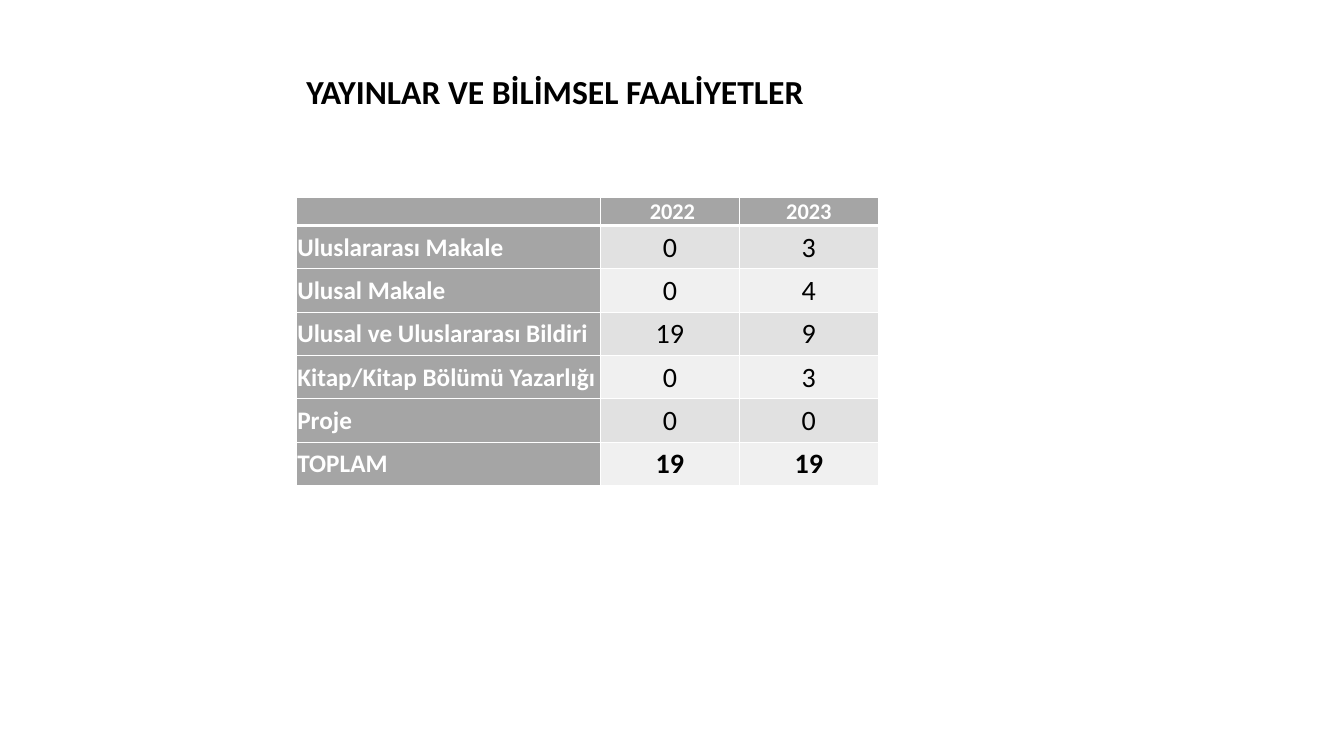
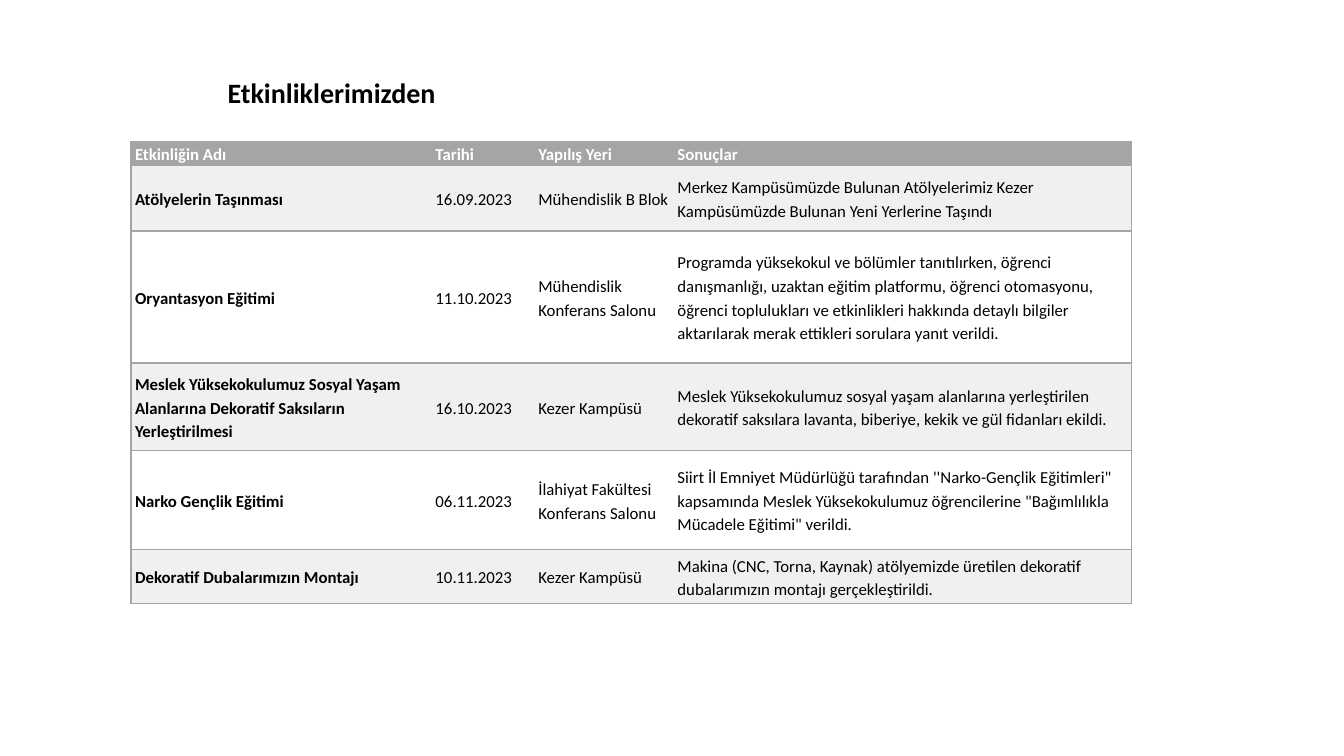
from dataclasses import dataclass

from lxml import etree
from pptx import Presentation
from pptx import util as u
from pptx.dml.color import RGBColor
from pptx.enum import text
from pptx.oxml import ns


# Shared look: colours, font, type sizes and line widths
@dataclass(frozen=True)
class Theme:
    font: str = "Calibri"
    ink: str = "000000"
    paper: str = "FFFFFF"
    grey: str = "A5A5A5"
    band_dark: str = "E1E1E1"
    band_light: str = "F0F0F0"
    main_title: int = 24
    sub_title: int = 20
    year: int = 16
    label: int = 18
    count: int = 20
    event: int = 12
    thin: int = 1
    thick: int = 3


THEME = Theme()
SLIDE_W, SLIDE_H = u.Inches(13.33), u.Inches(7.5)
PLAIN_TABLE = "{2D5ABB26-0587-4C30-8999-92F81FD0307C}"
CENTER, LEFT = text.PP_ALIGN.CENTER, text.PP_ALIGN.LEFT
MIDDLE, TOP = text.MSO_ANCHOR.MIDDLE, text.MSO_ANCHOR.TOP

# Publication counts: kind, 2022, 2023
PUBLICATIONS = [
    ("", " 2022", "2023"),
    ("Uluslararası Makale", "0", "3"),
    ("Ulusal Makale", "0", "4"),
    ("Ulusal ve Uluslararası Bildiri", "19", "9"),
    ("Kitap/Kitap Bölümü Yazarlığı", "0", "3"),
    ("Proje", "0", "0"),
    ("TOPLAM", "19", "19"),
]

# Events: name, date, place, results
EVENTS = [
    ("Etkinliğin Adı", "Tarihi", "Yapılış Yeri", "Sonuçlar"),
    ("Atölyelerin Taşınması", "16.09.2023", "Mühendislik B Blok",
     "Merkez Kampüsümüzde Bulunan Atölyelerimiz Kezer Kampüsümüzde "
     "Bulunan Yeni Yerlerine Taşındı"),
    ("Oryantasyon Eğitimi", "11.10.2023", "Mühendislik Konferans Salonu",
     "Programda yüksekokul ve bölümler tanıtılırken, öğrenci danışmanlığı, "
     "uzaktan eğitim platformu, öğrenci otomasyonu, öğrenci toplulukları ve "
     "etkinlikleri hakkında detaylı bilgiler aktarılarak merak ettikleri "
     "sorulara yanıt verildi."),
    ("Meslek Yüksekokulumuz Sosyal Yaşam Alanlarına Dekoratif Saksıların "
     "Yerleştirilmesi", "16.10.2023", "Kezer Kampüsü",
     "Meslek Yüksekokulumuz sosyal yaşam alanlarına yerleştirilen dekoratif "
     "saksılara lavanta, biberiye, kekik ve gül fidanları ekildi."),
    ("Narko Gençlik Eğitimi", "06.11.2023",
     "İlahiyat Fakültesi Konferans Salonu",
     "Siirt İl Emniyet Müdürlüğü tarafından ''Narko-Gençlik Eğitimleri\" "
     "kapsamında Meslek Yüksekokulumuz öğrencilerine \"Bağımlılıkla Mücadele "
     "Eğitimi\" verildi."),
    ("Dekoratif Dubalarımızın Montajı", "10.11.2023", "Kezer Kampüsü",
     "Makina (CNC, Torna, Kaynak) atölyemizde üretilen dekoratif "
     "dubalarımızın montajı gerçekleştirildi."),
]


# Helpers
def area(left, top, width, height):
    """Turn percentages of the slide into lengths."""
    return [int(share * side / 100) for share, side in
            zip((left, top, width, height), (SLIDE_W, SLIDE_H) * 2)]


def apply(target, values):
    for name, value in values.items():
        setattr(target, name, value)


def write(paragraph, words, size, color, bold, **layout):
    apply(paragraph, layout)
    if not words:
        # An empty cell still needs its type size to keep the row low
        end = etree.SubElement(paragraph._p, ns.qn("a:endParaRPr"))
        end.set("sz", str(size * 100))
        return
    run = paragraph.add_run()
    run.text = words
    apply(run.font, {"name": THEME.font, "size": u.Pt(size), "bold": bold})
    run.font.color.rgb = RGBColor.from_string(color)


def add_title(slide, words, place, size, line_spacing):
    frame = slide.shapes.add_textbox(*area(*place)).text_frame
    apply(frame, {"word_wrap": True, "vertical_anchor": MIDDLE})
    write(frame.paragraphs[0], words, size, THEME.ink, True,
          line_spacing=line_spacing)


def set_borders(cell, color, widths):
    """Draw the sides named in widths (L, R, T, B); the others stay bare."""
    props = cell._tc.get_or_add_tcPr()
    for side in "LRTB":
        line = etree.SubElement(props, ns.qn(f"a:ln{side}"))
        if side in widths:
            line.set("w", str(u.Pt(widths[side])))
            fill = etree.SubElement(line, ns.qn("a:solidFill"))
            etree.SubElement(fill, ns.qn("a:srgbClr")).set("val", color)
        else:
            etree.SubElement(line, ns.qn("a:noFill"))


def add_grid(slide, rows, place, col_weights, row_weights, style):
    """Add a table; style(row, col) gives each cell's format."""
    left, top, width, height = area(*place)
    frame = slide.shapes.add_table(len(rows), len(col_weights),
                                   left, top, width, height)
    grid = frame.table
    apply(grid, {"first_row": False, "horz_banding": False})
    grid._tbl.tblPr.find(ns.qn("a:tableStyleId")).text = PLAIN_TABLE
    for column, weight in zip(grid.columns, col_weights):
        column.width = int(width * weight / sum(col_weights))
    for row, weight in zip(grid.rows, row_weights):
        row.height = int(height * weight / sum(row_weights))
    for r, entries in enumerate(rows):
        for c, words in enumerate(entries):
            cell, look = grid.cell(r, c), style(r, c)
            apply(cell, look["cell"])
            set_borders(cell, *look["borders"])
            cell.fill.solid()
            cell.fill.fore_color.rgb = RGBColor.from_string(look["fill"])
            write(cell.text_frame.paragraphs[0], words, **look["text"])


def margins(side, top):
    return {"margin_left": u.Inches(side), "margin_right": u.Inches(side),
            "margin_top": u.Inches(top), "margin_bottom": 0}


# Cell formats
def publication_style(row, col):
    header, label, total = row == 0, col == 0, row == len(PUBLICATIONS) - 1
    heading = header or label
    size = THEME.year if header else THEME.label if label else THEME.count
    band = THEME.band_dark if row % 2 else THEME.band_light
    widths = dict.fromkeys("LRTB", THEME.thin)
    if row < 2:
        widths["B" if header else "T"] = THEME.thick
    return {
        "cell": {"vertical_anchor": MIDDLE, **margins(0.01, 0.01)},
        "borders": (THEME.paper, widths),
        "fill": THEME.grey if heading else band,
        "text": {"size": size, "bold": heading or total,
                 "color": THEME.paper if heading else THEME.ink,
                 "alignment": LEFT if label else CENTER},
    }


def event_style(row, col):
    header = row == 0
    sides = "TB" + {0: "L", len(EVENTS[0]) - 1: "R"}.get(col, "")
    band = THEME.band_light if row % 2 else THEME.paper
    return {
        "cell": {"vertical_anchor": TOP if header else MIDDLE,
                 **margins(0.04, 0)},
        "borders": (THEME.grey, dict.fromkeys(sides, THEME.thin)),
        "fill": THEME.grey if header else band,
        "text": {"size": THEME.event, "bold": header or col == 0,
                 "color": THEME.paper if header else THEME.ink,
                 "line_spacing": 1.15},
    }


def main():
    deck = Presentation()
    apply(deck, {"slide_width": SLIDE_W, "slide_height": SLIDE_H})
    blank = deck.slide_layouts[6]

    # Publications and scientific activities
    publications = deck.slides.add_slide(blank)
    add_title(publications, "YAYINLAR VE BİLİMSEL FAALİYETLER",
              (22.05, 8.67, 39, 6.67), THEME.main_title, 1.0)
    add_grid(publications, PUBLICATIONS, (22.05, 26.13, 43.3, 38),
             (3.02, 1.38, 1.38), (0.27,) + (0.43,) * 6, publication_style)

    # Events
    events = deck.slides.add_slide(blank)
    add_title(events, "Etkinliklerimizden",
              (16.2, 8.93, 64.44, 7.07), THEME.sub_title, 0.9)
    add_grid(events, EVENTS, (9.75, 18.7, 74.42, 61.2),
             (2.98, 1.02, 1.38, 4.54), (0.24, 0.65, 1.31, 0.87, 0.98, 0.54),
             event_style)

    deck.save("out.pptx")


if __name__ == "__main__":
    main()
